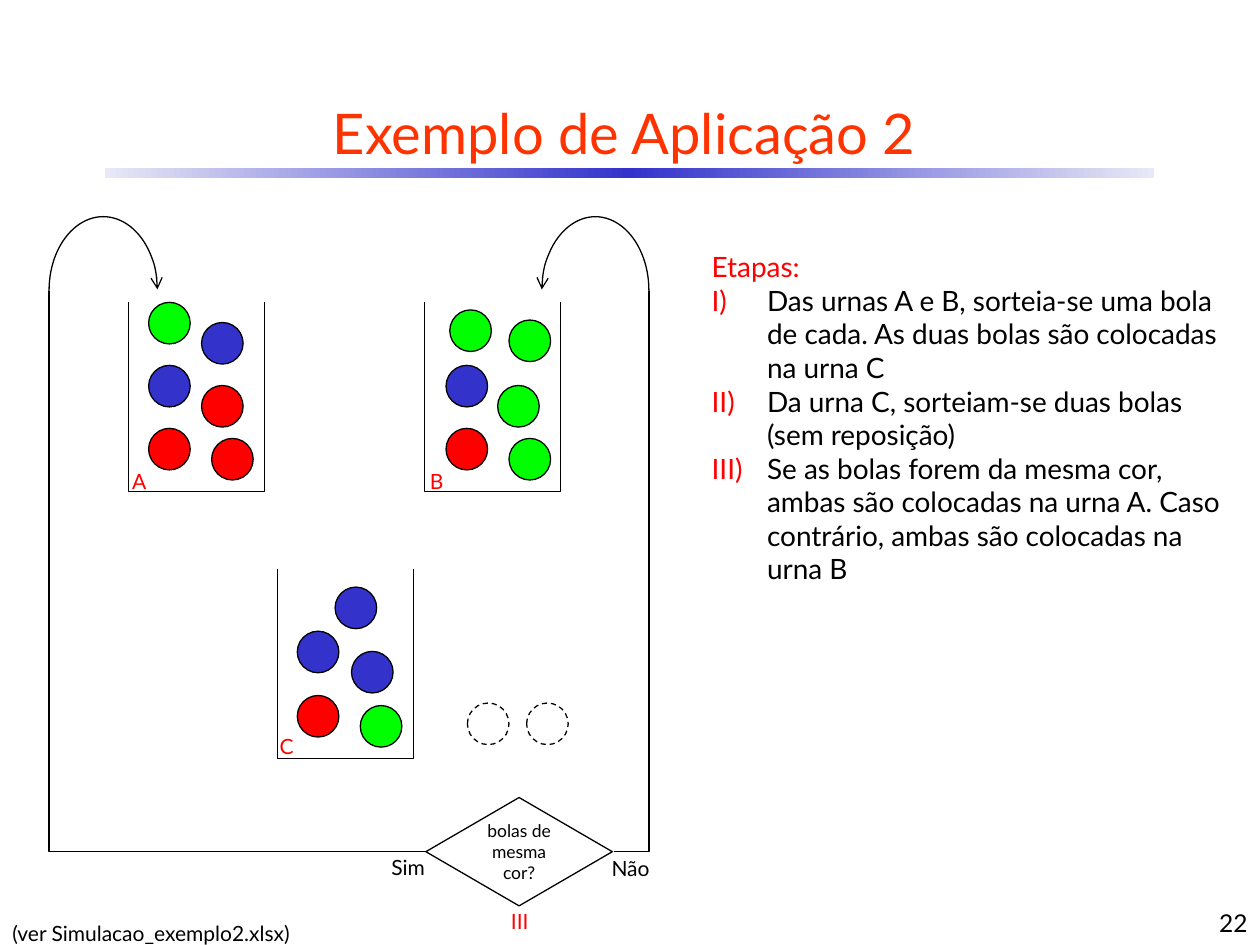
"""Builds a slide on drawing balls from three urns, with the rule that returns them."""
from typing import Any, NamedTuple, Optional

from pptx import Presentation
from pptx.dml.color import RGBColor
from pptx.enum.dml import MSO_LINE
from pptx.enum.shapes import MSO_CONNECTOR, MSO_SHAPE
from pptx.enum.text import MSO_ANCHOR, MSO_AUTO_SIZE, PP_ALIGN
from pptx.oxml.ns import qn
from pptx.util import Pt

PX = 9144
FONT = "Lato"
BLACK, RED, GREEN, BLUE = "000000", "FF0000", "00FF00", "3333CC"
ORANGE, PALE = "FF3300", "E8E8F6"
LEFT, MID, RIGHT = PP_ALIGN.LEFT, PP_ALIGN.CENTER, PP_ALIGN.RIGHT
TOP, CENTER, BOTTOM = MSO_ANCHOR.TOP, MSO_ANCHOR.MIDDLE, MSO_ANCHOR.BOTTOM
RECT, OVAL, RHOMB, ARC = (
    MSO_SHAPE.RECTANGLE, MSO_SHAPE.OVAL, MSO_SHAPE.DIAMOND, MSO_SHAPE.ARC)
DASH = MSO_LINE.DASH
ELBOW = MSO_CONNECTOR.ELBOW
GROW = MSO_AUTO_SIZE.SHAPE_TO_FIT_TEXT
BALL, URN_W, URN_H = 33, 108, 150


class Box(NamedTuple):
    x: int
    y: int
    w: int
    h: int


class Ball(NamedTuple):
    x: int
    y: int
    color: str


class Urn(NamedTuple):
    x: int
    y: int
    name: str
    tag: Box
    balls: list[Ball]


class Loop(NamedTuple):
    arc: Box
    flip: bool
    side: int
    tip: int


class Note(NamedTuple):
    text: str
    box: Box
    color: str


URNS = [
    Urn(102, 240, "A", Box(95, 367, 30, 30), [
        Ball(16, 0, GREEN), Ball(58, 16, BLUE), Ball(16, 50, BLUE),
        Ball(58, 66, RED), Ball(16, 100, RED), Ball(66, 108, RED)]),
    Urn(337, 240, "B", Box(331, 367, 31, 30), [
        Ball(17, 50, BLUE), Ball(58, 66, GREEN), Ball(17, 100, RED),
        Ball(67, 108, GREEN), Ball(67, 14, GREEN), Ball(20, 6, GREEN)]),
    Urn(220, 452, "C", Box(212, 577, 31, 30), [
        Ball(46, 14, BLUE), Ball(16, 49, BLUE), Ball(59, 65, BLUE),
        Ball(16, 100, RED), Ball(66, 108, GREEN)]),
]
LOOPS = [
    Loop(Box(39, 172, 86, 117), True, 39, 338),
    Loop(Box(430, 172, 85, 117), False, 515, 487),
]
NOTES = [
    Note("Sim", Box(300, 673, 48, 30), BLACK),
    Note("Não", Box(475, 674, 51, 30), BLACK),
    Note("III", Box(393, 716, 39, 30), RED),
]
STEPS = [
    "Das urnas A e B, sorteia-se uma bola de cada. "
    "As duas bolas são colocadas na urna C",
    "Da urna C, sorteiam-se duas bolas (sem reposição)",
    "Se as bolas forem da mesma cor, ambas são colocadas na urna A. "
    "Caso contrário, ambas são colocadas na urna B",
]


def rgb(code: str) -> RGBColor:
    return RGBColor.from_string(code)


def emu(box: Box) -> list[int]:
    return [side * PX for side in box]


def write(par: Any, text: str, *, size: int, color: str = BLACK,
          align: PP_ALIGN = LEFT, space: float = 1.0,
          indent: int = 0, roman: bool = False) -> None:
    run = par.add_run()
    run.text = text
    run.font.name, run.font.size = FONT, Pt(size)
    run.font.color.rgb = rgb(color)
    par.alignment, par.line_spacing = align, space
    props = par._p.get_or_add_pPr()
    props.set("marL", str(indent * PX))
    props.set("indent", str(-indent * PX))
    if roman:
        tint = props.makeelement(qn("a:buClr"), {})
        tint.append(tint.makeelement(qn("a:srgbClr"), {"val": RED}))
        props.append(tint)
        props.append(props.makeelement(
            qn("a:buAutoNum"), {"type": "romanUcParenR"}))


def frame(slide: Any, box: Box, wrap: bool = True,
          anchor: MSO_ANCHOR = TOP, grow: bool = False) -> Any:
    body = slide.shapes.add_textbox(*emu(box)).text_frame
    body.word_wrap, body.vertical_anchor = wrap, anchor
    if grow:
        body.auto_size = GROW
    return body


def label(slide: Any, note: Note) -> None:
    body = frame(slide, note.box, wrap=False, grow=True)
    write(body.paragraphs[0], note.text, size=12, color=note.color, align=MID)


def ink(shape: Any, fill: Optional[str] = None) -> Any:
    shape.shadow.inherit = False
    if fill:
        shape.fill.solid()
        shape.fill.fore_color.rgb = rgb(fill)
    else:
        shape.fill.background()
    shape.line.color.rgb, shape.line.width = rgb(BLACK), Pt(0.75)
    return shape


def form(slide: Any, kind: MSO_SHAPE, box: Box, fill: Optional[str] = None) -> Any:
    return ink(slide.shapes.add_shape(kind, *emu(box)), fill)


def draw_urn(slide: Any, urn: Urn) -> None:
    x, y = urn.x, urn.y
    low, far = y + URN_H, x + URN_W
    path = slide.shapes.build_freeform(x, y, scale=PX)
    path.add_line_segments([(x, low), (far, low), (far, y)], close=False)
    ink(path.convert_to_shape())
    for ball in urn.balls:
        form(slide, OVAL, Box(x + ball.x, y + ball.y, BALL, BALL), ball.color)
    label(slide, Note(urn.name, urn.tag, RED))


def draw_loop(slide: Any, loop: Loop) -> None:
    arc = form(slide, ARC, loop.arc)
    arc.adjustments[0], arc.adjustments[1] = 108.6, 0.4
    if loop.flip:
        arc._element.spPr.get_or_add_xfrm().set("flipH", "1")
    edge = arc.line._get_or_add_ln()
    edge.append(edge.makeelement(qn("a:headEnd"), {"type": "arrow"}))
    wire = slide.shapes.add_connector(
        ELBOW, loop.tip * PX, 676 * PX, loop.side * PX, 231 * PX)
    wire.line.color.rgb, wire.line.width = rgb(BLACK), Pt(0.75)
    props = wire._element.spPr
    props.find(qn("a:prstGeom")).set("prst", "bentConnector2")
    props.append(props.makeelement(qn("a:effectLst"), {}))


def draw_bar(slide: Any) -> None:
    bar = form(slide, RECT, Box(83, 133, 833, 8))
    bar.line.fill.background()
    bar.fill.gradient()
    bar.fill.gradient_angle = 0
    stops = bar._element.spPr.find(qn("a:gradFill")).find(qn("a:gsLst"))
    for stop in list(stops):
        stops.remove(stop)
    for pos, color in ((0, PALE), (50, BLUE), (100, PALE)):
        stop = stops.makeelement(qn("a:gs"), {"pos": str(pos * 1000)})
        stop.append(stop.makeelement(qn("a:srgbClr"), {"val": color}))
        stops.append(stop)


def main() -> None:
    deck = Presentation()
    deck.slide_width, deck.slide_height = 1000 * PX, 750 * PX
    slide = deck.slides.add_slide(deck.slide_layouts[6])
    draw_bar(slide)
    title = frame(slide, Box(33, 67, 925, 75), anchor=CENTER)
    write(title.paragraphs[0], "Exemplo de Aplicação 2",
          size=32, color=ORANGE, align=MID)
    for urn in URNS:
        draw_urn(slide, urn)
    for x in (371, 418):
        form(slide, OVAL, Box(x, 558, BALL, BALL)).line.dash_style = DASH
    test = form(slide, RHOMB, Box(338, 633, 148, 86)).text_frame
    test.word_wrap, test.vertical_anchor = True, CENTER
    write(test.paragraphs[0], "bolas de mesma cor?", size=10, align=MID)
    for loop in LOOPS:
        draw_loop(slide, loop)
    for note in NOTES:
        label(slide, note)
    plan = frame(slide, Box(555, 180, 430, 293), grow=True)
    write(plan.paragraphs[0], "Etapas:", size=16, color=RED, space=1.5, indent=21)
    for step in STEPS:
        write(plan.add_paragraph(), step, size=16, indent=44, roman=True)
    page = frame(slide, Box(792, 714, 208, 35), anchor=BOTTOM)
    write(page.paragraphs[0], "22", size=14, align=RIGHT)
    foot = frame(slide, Box(0, 716, 263, 37), grow=True)
    write(foot.paragraphs[0], "(ver Simulacao_exemplo2.xlsx)",
          size=12, space=1.5, indent=39)
    deck.save("out.pptx")


if __name__ == "__main__":
    main()
